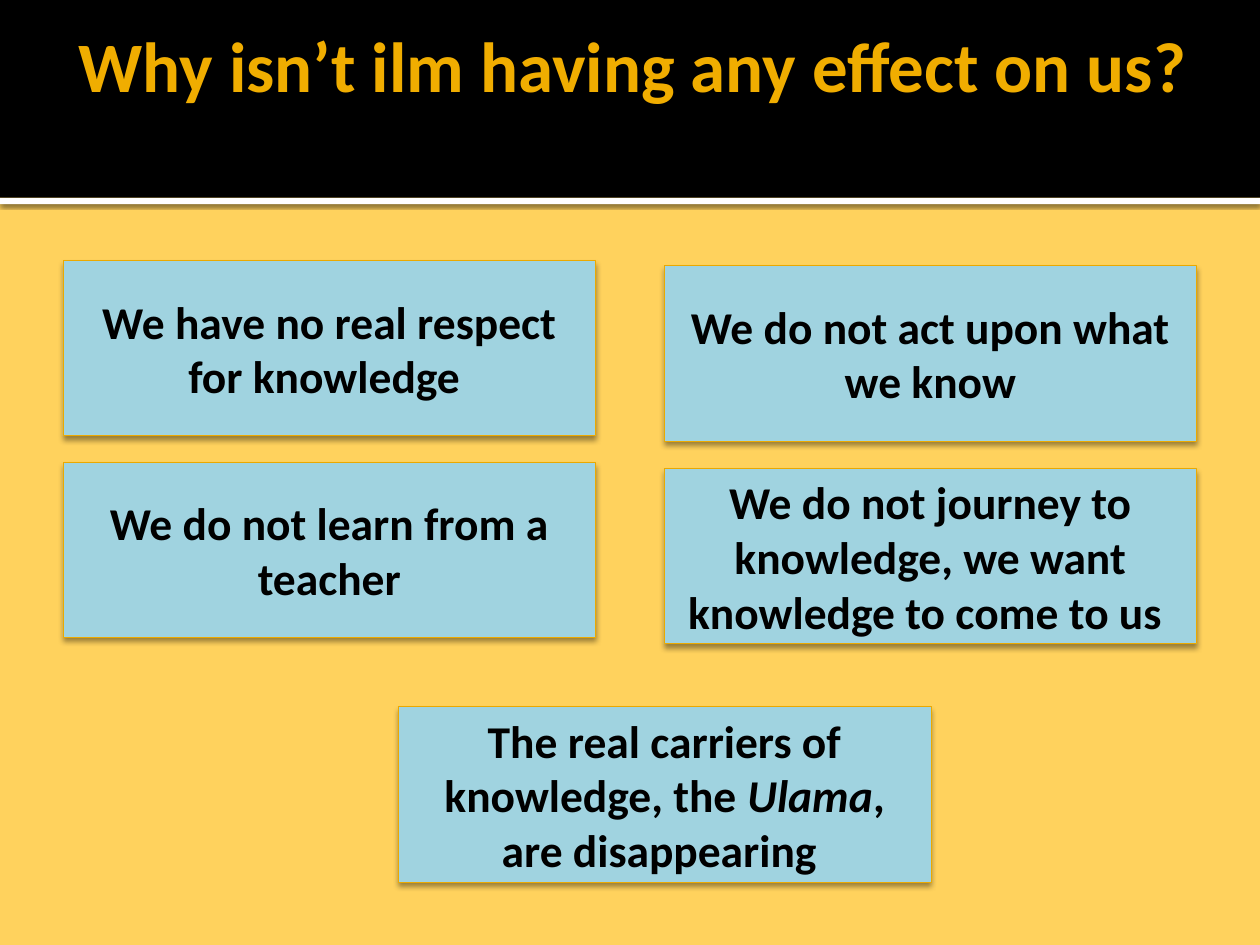
from dataclasses import dataclass

from lxml import etree
from pptx import Presentation
from pptx import util as u
from pptx.dml.color import RGBColor
from pptx.enum import shapes, text
from pptx.oxml.ns import qn


@dataclass(frozen=True)
class Theme:
    font: str = "Calibri"
    title_size: float = 40.5
    card_size: float = 26
    background: str = "FFD25D"
    band: str = "000000"
    rule: str = "FFFFFF"
    title: str = "F0AD00"
    card: str = "A0D3E0"
    card_line: str = "EBA900"
    card_text: str = "000000"


THEME = Theme()
WIDTH, HEIGHT = 10, 7.5
MARGIN = 0.5
CARD_W, CARD_H = 4.23, 1.39
LEFT_COL, RIGHT_COL = MARGIN, WIDTH - MARGIN - CARD_W

# Left, top and runs (wording, italic) of each reason
REASONS = [
    (LEFT_COL, 2.07, [("We have no real respect for knowledge ", False)]),
    (RIGHT_COL, 2.11, [("We do not act upon what we know", False)]),
    (LEFT_COL, 3.67, [("We do not learn from a teacher", False)]),
    (RIGHT_COL, 3.72, [("We do not journey to knowledge, we want "
                        "knowledge to come to us ", False)]),
    (3.16, 5.61, [("The real carriers of knowledge, the ", False),
                  ("Ulama", True), (", are disappearing ", False)]),
]


def rgb(value):
    return RGBColor.from_string(value)


def add_shadow(shape, alpha, blur, distance):
    """Cast a black shadow straight down; blur and distance in points."""
    shape.shadow.inherit = False
    effects = shape.element.spPr.find(qn("a:effectLst"))
    shadow = etree.SubElement(
        effects, qn("a:outerShdw"), blurRad=str(u.Pt(blur)),
        dist=str(u.Pt(distance)), dir="5400000", algn="ctr", rotWithShape="0")
    color = etree.SubElement(shadow, qn("a:srgbClr"), val="000000")
    etree.SubElement(color, qn("a:alpha"), val=str(alpha * 1000))


def add_rect(slide, box, fill):
    rect = slide.shapes.add_shape(
        shapes.MSO_SHAPE.RECTANGLE, *(u.Inches(length) for length in box))
    rect.shadow.inherit = False
    rect.fill.solid()
    rect.fill.fore_color.rgb = rgb(fill)
    rect.line.fill.background()
    return rect


def write_runs(frame, runs, size, color):
    frame.word_wrap = True
    frame.auto_size = text.MSO_AUTO_SIZE.NONE
    paragraph = frame.paragraphs[0]
    paragraph.alignment = text.PP_ALIGN.CENTER
    for wording, italic in runs:
        run = paragraph.add_run()
        run.text = wording
        run.font.name = THEME.font
        run.font.size = u.Pt(size)
        run.font.bold = True
        run.font.italic = italic
        run.font.color.rgb = rgb(color)


def add_header(slide, box):
    left, top, width, height = box
    # White rule below the black band
    rule = add_rect(slide, (left, top + height, width, 0.05), THEME.rule)
    add_shadow(rule, alpha=60, blur=2.5, distance=0.8)
    add_rect(slide, box, THEME.band)

    # Title, raised above the band
    title = slide.shapes.title
    title.left, title.top = u.Inches(left + MARGIN), u.Inches(top + 0.17)
    title.width, title.height = u.Inches(width - 2 * MARGIN), u.Inches(1.37)
    frame = title.text_frame
    frame.vertical_anchor = text.MSO_ANCHOR.TOP
    frame.margin_left = u.Inches(0.1)
    frame.margin_right = u.Inches(0.05)
    frame.margin_top = 0
    write_runs(frame, [("Why isn’t ilm having any effect on us?", False)],
               THEME.title_size, THEME.title)
    title.element.getparent().append(title.element)


def add_card(slide, box, runs):
    card = add_rect(slide, box, THEME.card)
    card.line.color.rgb = rgb(THEME.card_line)
    card.line.width = u.Pt(0.5)
    add_shadow(card, alpha=38, blur=3.1, distance=2)
    card.text_frame.vertical_anchor = text.MSO_ANCHOR.MIDDLE
    write_runs(card.text_frame, runs, THEME.card_size, THEME.card_text)


def main():
    deck = Presentation()
    deck.slide_width, deck.slide_height = u.Inches(WIDTH), u.Inches(HEIGHT)
    slide = deck.slides.add_slide(deck.slide_layouts.get_by_name("Title Only"))
    slide.background.fill.solid()
    slide.background.fill.fore_color.rgb = rgb(THEME.background)

    add_header(slide, (0, 0, WIDTH, 1.57))
    for left, top, runs in REASONS:
        add_card(slide, (left, top, CARD_W, CARD_H), runs)
    deck.save("out.pptx")


if __name__ == "__main__":
    main()
